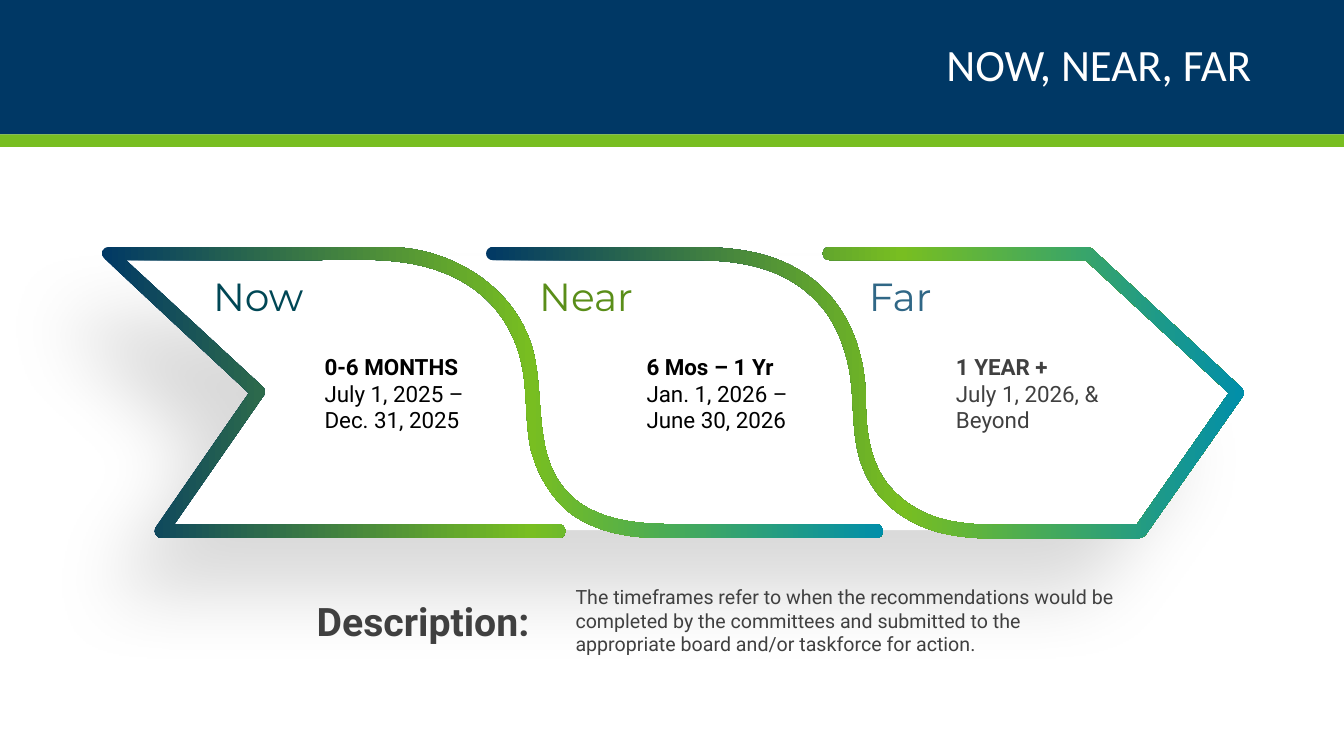
from copy import deepcopy

from lxml.etree import SubElement
from pptx import Presentation
from pptx.dml.color import RGBColor
from pptx.enum.shapes import MSO_SHAPE as Preset
from pptx.enum.text import MSO_ANCHOR as Anchor, MSO_AUTO_SIZE as AutoSize, PP_ALIGN as Align
from pptx.oxml.ns import qn
from pptx.util import Pt

NAVY, GREEN, TEAL = "003865", "78BE21", "008EAA"
WHITE, BLACK, GRAY = "FFFFFF", "000000", "404040"
GRADIENT = [(0, NAVY), (0.55, GREEN), (1, TEAL)]

BACKDROP = [
    (778.3, 182.9), (883.4, 280.8), (814.3, 378.7),
    (115.2, 378.7), (182.9, 280.8), (79.2, 182.9), (778.3, 182.9),
]
LEFT_RIBBON = [
    (625.7, 374.4), (483.1, 374.4),
    (459.4, 374.4, 436.3, 373, 416.2, 360.7),
    (377.3, 334.8, 391, 286.6, 380.2, 248.4),
    (367.2, 204.5, 322.6, 177.1, 277.9, 176.4),
    (77.8, 176.4),
    (73.4, 176.4, 70.6, 181.4, 74.2, 184.3),
    (177.8, 280.8), (110.9, 377.3),
    (109.4, 380.2, 112.3, 384.5, 115.2, 384.5),
    (398.9, 384.5),
    (405.4, 384.5, 405.4, 374.4, 398.9, 374.4),
    (124.6, 374.4), (188.6, 282.2),
    (189.4, 280.8, 189.4, 277.9, 187.9, 276.5),
    (90, 185.8), (221, 185.8),
    (252, 185.8, 284.4, 182.9, 313.9, 193.7),
    (342.7, 203.8, 363.6, 225.4, 371.5, 255.6),
    (377.3, 277.2, 374.4, 299.5, 379.4, 321.8),
    (383.8, 338.4, 392.4, 353.5, 405.4, 365),
    (425.5, 380.9, 451.4, 384.5, 476.6, 384.5),
    (625.7, 384.5),
    (632.2, 384.5, 632.2, 374.4, 625.7, 374.4),
]
RIGHT_RIBBON = [
    (887, 277.2), (784.1, 181.4),
    (781.2, 178.6, 779.8, 176.4, 774.7, 176.4),
    (592.6, 176.4),
    (586.1, 176.4, 586.1, 185.8, 592.6, 185.8),
    (775.4, 185.8), (877.7, 280.8), (812.2, 374.4), (744.5, 374.4),
    (722.2, 374.4, 698.4, 376.6, 676.1, 371.5),
    (660.2, 367.9, 646.6, 360, 635.8, 347.8),
    (621.4, 331.2, 618.5, 307.4, 618.5, 286.6),
    (618.5, 253.4, 607, 219.6, 579.6, 198.7),
    (553.7, 179.3, 524.2, 176.4, 493.2, 176.4),
    (352.1, 176.4),
    (345.6, 176.4, 345.6, 185.8, 352.1, 185.8),
    (495.4, 185.8),
    (528.5, 185.8, 560.9, 190.8, 584.6, 216.7),
    (596.2, 229, 602.6, 245.5, 606.2, 262.1),
    (610.6, 283.7, 607.7, 306.7, 614.2, 328.3),
    (624.2, 360.7, 652.3, 378.7, 684.7, 383),
    (706.3, 385.9, 730.1, 384.5, 752.4, 384.5),
    (797.8, 384.5),
    (802.1, 384.5, 815.8, 386.6, 818.6, 381.6),
    (887.8, 283),
    (889.2, 280.8, 888.5, 278.6, 887, 277.2),
]
PHASES = [
    ("Now", 152.2, "004755", 231.8, BLACK, "0-6 MONTHS", "July 1, 2025 – Dec. 31, 2025"),
    ("Near", 385.2, "5A8E19", 461.8, BLACK, "6 Mos – 1 Yr", "Jan. 1, 2026 – June 30, 2026"),
    ("Far", 620.6, "306786", 682.8, GRAY, "1 YEAR +", "July 1, 2026, & Beyond"),
]
DESCRIPTION = (
    "The timeframes refer to when the recommendations would be completed by the "
    "committees and submitted to the appropriate board and/or taskforce for action."
)


def color(value):
    return RGBColor.from_string(value)


def paint(shape, fill):
    shape.shadow.inherit = False
    shape.fill.solid()
    shape.fill.fore_color.rgb = color(fill)
    shape.line.fill.background()


def add_band(slide, top, height, fill):
    shape = slide.shapes.add_shape(Preset.RECTANGLE, 0, Pt(top), Pt(960), Pt(height))
    paint(shape, fill)


def bend(shape, segments):
    lines = iter(list(shape.element.iter(qn("a:lnTo"))))
    for segment in segments:
        first = next(lines)
        if len(segment) == 6:
            first.tag = qn("a:cubicBezTo")
            for line in (next(lines), next(lines)):
                first.append(line[0])
                line.getparent().remove(line)


def add_outline(slide, outline):
    start, *points = [(Pt(x), Pt(y)) for segment in outline
                      for x, y in zip(segment[::2], segment[1::2])]
    builder = slide.shapes.build_freeform(*start)
    builder.add_line_segments(points, close=True)
    shape = builder.convert_to_shape()
    bend(shape, outline[1:])
    paint(shape, WHITE)
    return shape


def add_ribbon(slide, outline):
    shape = add_outline(slide, outline)
    shape.fill.gradient()
    shape.fill.gradient_angle = 0
    stop_list = next(shape.element.iter(qn("a:gsLst")))
    stop_list.append(deepcopy(stop_list[0]))
    for stop, (position, value) in zip(shape.fill.gradient_stops, GRADIENT):
        stop.position = position
        stop.color.rgb = color(value)


def add_shadow(shape, value, opacity, blur, distance, angle):
    effects = next(shape.element.iter(qn("a:effectLst")))
    shadow = SubElement(effects, qn("a:outerShdw"), blurRad=str(Pt(blur)),
                        dist=str(Pt(distance)), dir=str(angle * 60000),
                        algn="ctr", rotWithShape="0")
    tint = SubElement(shadow, qn("a:srgbClr"), val=value)
    SubElement(tint, qn("a:alpha"), val=str(opacity * 1000))


def add_text(slide, text, left, top, width, height, *, font="Roboto", size=16, fill=GRAY,
             bold_lines=0, align=Align.LEFT, margins=(0, 0), spacing=None,
             auto_size=AutoSize.SHAPE_TO_FIT_TEXT):
    box = slide.shapes.add_textbox(Pt(left), Pt(top), Pt(width), Pt(height))
    frame = box.text_frame
    frame.word_wrap = True
    frame.auto_size = auto_size
    frame.vertical_anchor = Anchor.MIDDLE
    frame.margin_left = frame.margin_right = Pt(margins[0])
    frame.margin_top = frame.margin_bottom = Pt(margins[1])
    frame.text = text
    for index, paragraph in enumerate(frame.paragraphs):
        paragraph.alignment = align
        paragraph.line_spacing = spacing
        paragraph.font.name = font
        paragraph.font.size = Pt(size)
        paragraph.font.bold = index < bold_lines
        paragraph.font.color.rgb = color(fill)


def add_phase(slide, name, name_left, name_fill, dates_left, dates_fill, period, dates):
    add_text(slide, name, name_left, 194.6, 187.2, 33.8,
             font="Montserrat", size=28, fill=name_fill)
    add_text(slide, f"{period}\n{dates}", dates_left, 251.7, 116.6, 58.3,
             fill=dates_fill, bold_lines=1)


def main():
    presentation = Presentation()
    presentation.slide_width, presentation.slide_height = Pt(960), Pt(540)
    slide = presentation.slides.add_slide(presentation.slide_layouts[6])
    add_band(slide, 0, 96, NAVY)
    add_band(slide, 96, 9, GREEN)
    add_text(slide, "NOW, NEAR, FAR", 66, 0, 828, 96, font="Calibri", size=32, fill=WHITE,
             align=Align.RIGHT, margins=(0, 3.6), spacing=0.9, auto_size=AutoSize.NONE)
    add_shadow(add_outline(slide, BACKDROP), BLACK, 14, 56, 59, 129)
    for ribbon in (LEFT_RIBBON, RIGHT_RIBBON):
        add_ribbon(slide, ribbon)
    for phase in PHASES:
        add_phase(slide, *phase)
    add_text(slide, "Description:", 154.8, 422.8, 230.4, 41, size=28, bold_lines=1,
             align=Align.RIGHT, margins=(7.2, 3.6))
    add_text(slide, DESCRIPTION, 411.1, 417.6, 390, 51.1, size=14)
    presentation.save("out.pptx")


if __name__ == "__main__":
    main()
